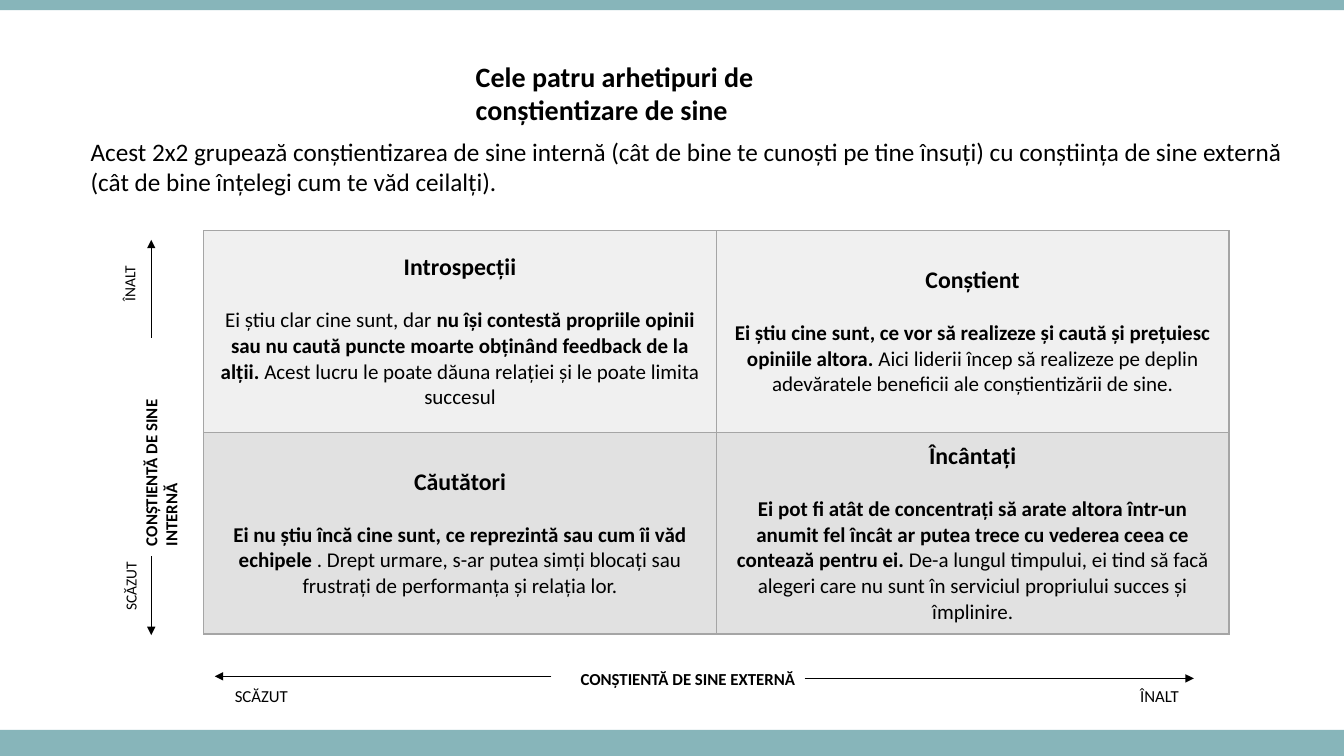
from lxml import etree
from pptx import Presentation
from pptx.dml.color import RGBColor
from pptx.enum.shapes import MSO_CONNECTOR, MSO_SHAPE
from pptx.enum.text import MSO_ANCHOR, PP_ALIGN
from pptx.oxml.ns import qn
from pptx.util import Inches, Pt

RECT, STRAIGHT = MSO_SHAPE.RECTANGLE, MSO_CONNECTOR.STRAIGHT
TOP, MIDDLE, BOTTOM = MSO_ANCHOR.TOP, MSO_ANCHOR.MIDDLE, MSO_ANCHOR.BOTTOM
CENTER = PP_ALIGN.CENTER
FONT, BLACK, TEAL, BORDER = "Calibri", "000000", "87B5BA", "A5A5A5"

# Content: bars and texts (left, top, width, height)
BARS = [(0, 7.24, 13.33, 0.26), (0, 0, 13.33, 0.1)]
# text, box, size, bold, rotation, anchor
LABELS = [
    ("Cele patru arhetipuri de conștientizare de sine",
     (4.62, 0.54, 4.29, 0.44), 20, True, 0, TOP),
    ("Acest 2x2 grupează conștientizarea de sine internă (cât de bine te cunoști "
     "pe tine însuți) cu conștiința de sine externă (cât de bine înțelegi cum te "
     "văd ceilalți).", (0.8, 1.3, 12.22, 0.71), 18, False, 0, TOP),
    ("CONȘTIENTĂ DE SINE EXTERNĂ", (5.66, 6.59, 2.5, 0.3), 12, True, 0, TOP),
    ("CONȘTIENTĂ DE SINE INTERNĂ", (0.41, 4.28, 2.17, 0.3), 12, True, 270, TOP),
    ("SCĂZUT", (2.23, 6.65, 0.75, 0.4), 12, False, 0, BOTTOM),
    ("ÎNALT", (11.21, 6.75, 0.63, 0.3), 12, False, 0, TOP),
    ("SCĂZUT", (0.86, 5.58, 0.75, 0.4), 11, False, 270, BOTTOM),
    ("ÎNALT", (0.88, 2.54, 0.81, 0.29), 11, False, 270, TOP),
]

# Content: matrix, each cell a heading and (text, bold) runs
MATRIX_BOX = (2.02, 2.29, 10.17, 4)
ROW_FILLS = ["F0F0F0", "E1E1E1"]
ARCHETYPES = [
    [("Introspecții", [
        ("Ei știu clar cine sunt, dar ", False),
        ("nu își contestă propriile opinii sau nu caută puncte moarte obținând "
         "feedback de la alții. ", True),
        ("Acest lucru le poate dăuna relației și le poate limita succesul", False)]),
     ("Conștient", [
        ("Ei știu cine sunt, ce vor să realizeze și caută și prețuiesc opiniile "
         "altora. ", True),
        ("Aici liderii încep să realizeze pe deplin adevăratele beneficii ale "
         "conștientizării de sine.", False)])],
    [("Căutători", [
        ("Ei nu știu încă cine sunt, ce reprezintă sau cum îi văd echipele ", True),
        (". Drept urmare, s-ar putea simți blocați sau frustrați de performanța și "
         "relația lor.", False)]),
     ("Încântați", [
        ("Ei pot fi atât de concentrați să arate altora într-un anumit fel încât ar "
         "putea trece cu vederea ceea ce contează pentru ei. ", True),
        ("De-a lungul timpului, ei tind să facă alegeri care nu sunt în serviciul "
         "propriului succes și împlinire.", False)])],
]

# Content: axis arrows (x1, y1, x2, y2)
ARROWS = [(5.47, 6.71, 2.13, 6.71), (7.98, 6.73, 11.84, 6.73),
          (1.5, 3.35, 1.5, 2.38), (1.5, 5.52, 1.5, 6.3)]


def color(hex_value):
    return RGBColor.from_string(hex_value)


def add_run(p, text, size, bold):
    r = p.add_run()
    r.text = text
    r.font.name, r.font.size, r.font.bold = FONT, Pt(size), bold
    r.font.color.rgb = color(BLACK)


def add_bar(s, box):
    sp = s.shapes.add_shape(RECT, *map(Inches, box))
    sp.shadow.inherit = False
    sp.fill.solid()
    sp.fill.fore_color.rgb = color(TEAL)
    sp.line.fill.background()


def add_label(s, text, box, size, bold, rotation, anchor):
    sp = s.shapes.add_textbox(*map(Inches, box))
    sp.rotation = rotation
    tf = sp.text_frame
    tf.word_wrap = True
    tf.vertical_anchor = anchor
    add_run(tf.paragraphs[0], text, size, bold)


def add_borders(cell):
    tc_pr = cell._tc.get_or_add_tcPr()
    for i, side in enumerate(("lnL", "lnR", "lnT", "lnB")):
        ln = etree.Element(qn(f"a:{side}"), w=str(Pt(1)))
        fill = etree.SubElement(ln, qn("a:solidFill"))
        etree.SubElement(fill, qn("a:srgbClr"), val=BORDER)
        tc_pr.insert(i, ln)


def fill_cell(cell, heading, runs, fill):
    cell.fill.solid()
    cell.fill.fore_color.rgb = color(fill)
    cell.vertical_anchor = MIDDLE
    add_borders(cell)
    tf = cell.text_frame
    p = tf.paragraphs[0]
    p.alignment = CENTER
    p.space_after = Pt(18.3)
    add_run(p, heading, 17, True)
    p = tf.add_paragraph()
    p.alignment = CENTER
    for text, bold in runs:
        add_run(p, text, 15, bold)


def add_matrix(s):
    n_rows, n_cols = len(ARCHETYPES), len(ARCHETYPES[0])
    table = s.shapes.add_table(n_rows, n_cols, *map(Inches, MATRIX_BOX)).table
    table.first_row = table.horz_banding = False
    for i, row in enumerate(ARCHETYPES):
        for j, (heading, runs) in enumerate(row):
            fill_cell(table.cell(i, j), heading, runs, ROW_FILLS[i])


def add_arrow(s, ends):
    line = s.shapes.add_connector(STRAIGHT, *map(Inches, ends))
    line.line.color.rgb = color(BLACK)
    line.line.width = Pt(0.5)
    etree.SubElement(line.line._get_or_add_ln(), qn("a:tailEnd"), type="triangle")
    etree.SubElement(line._element.spPr, qn("a:effectLst"))


def main():
    prs = Presentation()
    prs.slide_width, prs.slide_height = Inches(13.33), Inches(7.5)
    s = prs.slides.add_slide(prs.slide_layouts[6])
    for box in BARS:
        add_bar(s, box)
    add_matrix(s)
    for label in LABELS:
        add_label(s, *label)
    for ends in ARROWS:
        add_arrow(s, ends)
    prs.save("out.pptx")


if __name__ == "__main__":
    main()
